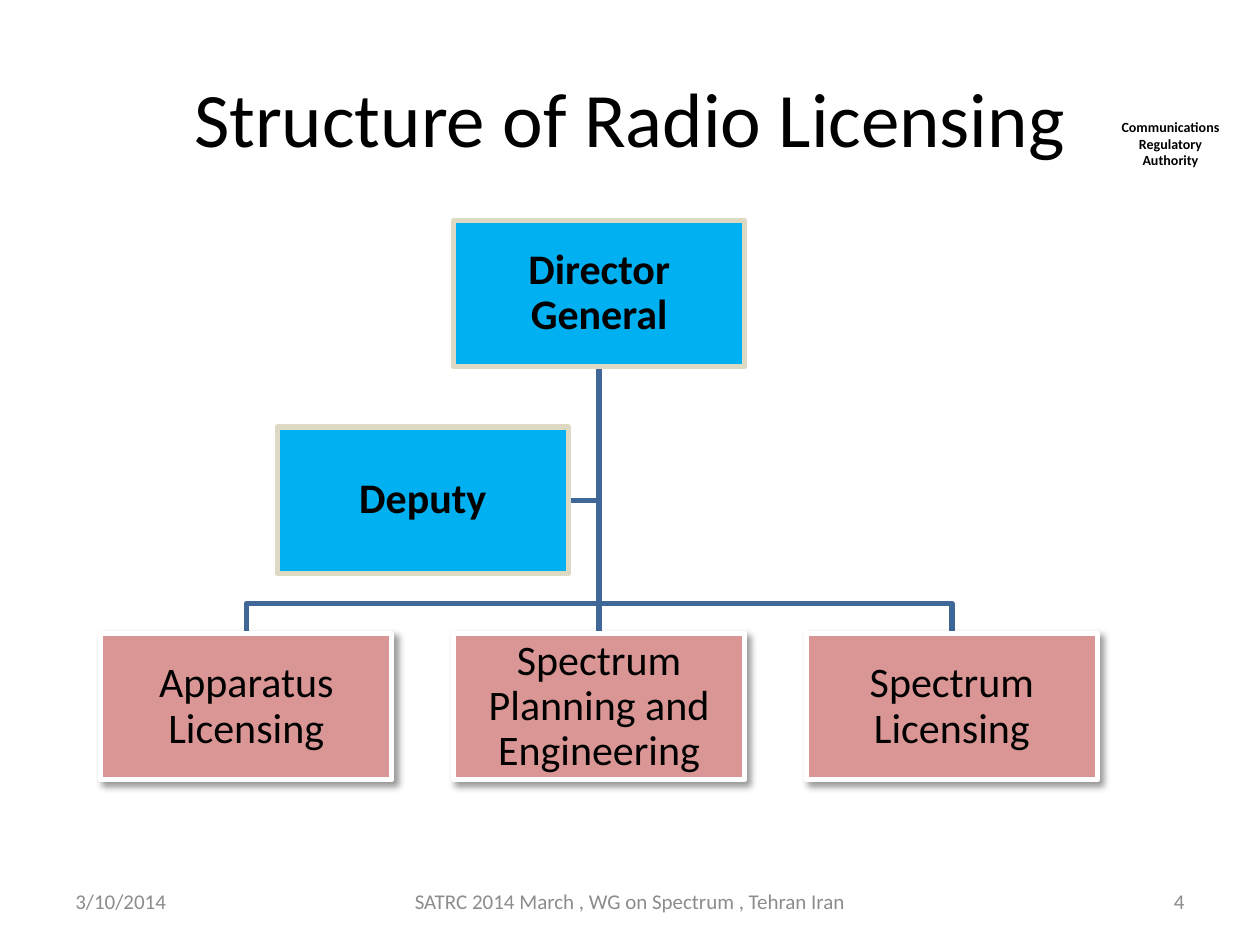
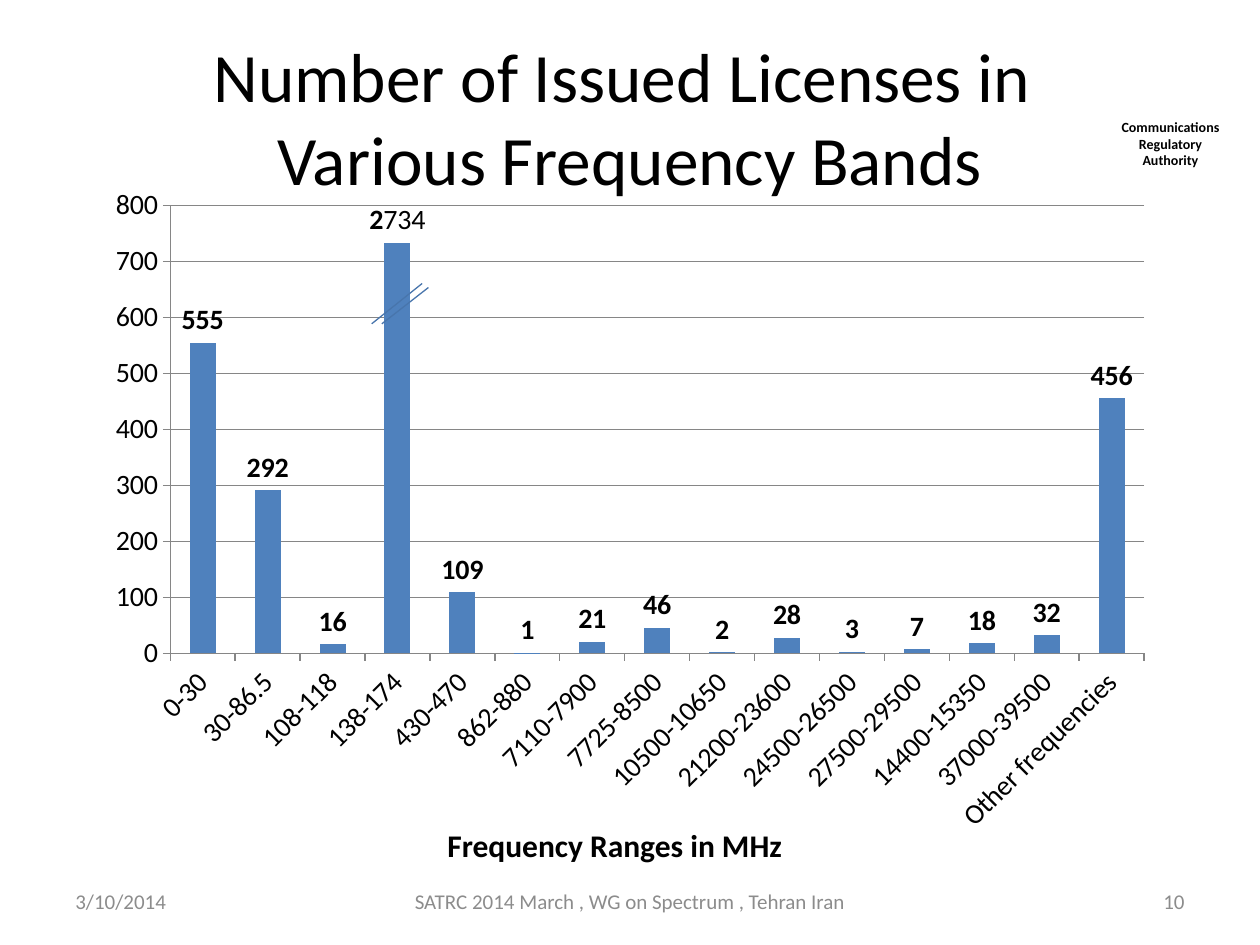
from dataclasses import dataclass
from lxml.etree import SubElement
from pptx import Presentation
from pptx.chart.data import CategoryChartData
from pptx.dml.color import RGBColor
from pptx.enum.chart import XL_CHART_TYPE, XL_LABEL_POSITION, XL_TICK_MARK
from pptx.enum.shapes import MSO_CONNECTOR, MSO_SHAPE
from pptx.enum.text import MSO_ANCHOR, MSO_AUTO_SIZE, PP_ALIGN
from pptx.oxml.ns import qn
from pptx.util import Inches, Pt

COLORS = {
    "text": "000000",
    "footer": "8C8C8C",
    "branch": "3F6797",
    "leader": "00B0F0",
    "leader_edge": "DDD9C3",
    "unit": "D99694",
    "unit_edge": "FFFFFF",
    "shadow": "000000",
    "bar": "4F81BD",
    "axis": "868686",
    "break": "4875AC",
}
FONT = "Calibri"
COLUMNS, ROWS = 100, 75
CELL = 0.1
FOOTER_TOP, FOOTER_HEIGHT = 69.5, 4
DATE = "3/10/2014"
EVENT = "SATRC 2014 March , WG on Spectrum , Tehran Iran"
AUTHORITY = "Communications Regulatory Authority"

LICENSES = {
    "0-30": 555,
    "30-86.5": 292,
    "108-118": 16,
    "138-174": 734,
    "430-470": 109,
    "862-880": 1,
    "7110-7900": 21,
    "7725-8500": 46,
    "10500-10650": 2,
    "21200-23600": 28,
    "24500-26500": 3,
    "27500-29500": 7,
    "14400-15350": 18,
    "37000-39500": 32,
    "Other frequencies": 456,
}
BROKEN_BAND = "138-174"


@dataclass
class Box:
    left: float
    top: float
    width: float
    height: float

    def share(self, left, width):
        return Box(self.left + left * self.width, self.top,
                   width * self.width, self.height)

    def point(self, across, down):
        return (Inches((self.left + across * self.width) * CELL),
                Inches((self.top + down * self.height) * CELL))

    def frame(self):
        return [Inches(length * CELL)
                for length in (self.left, self.top, self.width, self.height)]


def color(name):
    return RGBColor.from_string(COLORS[name])


def style_font(font, size, name="text", bold=False):
    font.name, font.size, font.bold = FONT, Pt(size), bold
    font.color.rgb = color(name)


def style_line(line, name, width):
    line.color.rgb = color(name)
    line.width = Pt(width)


def write(shape, text, size, name="text", bold=False, align=PP_ALIGN.CENTER,
          anchor=MSO_ANCHOR.MIDDLE):
    text_frame = shape.text_frame
    text_frame.word_wrap = True
    text_frame.auto_size = MSO_AUTO_SIZE.NONE
    text_frame.vertical_anchor = anchor
    paragraph = text_frame.paragraphs[0]
    paragraph.alignment = align
    for index, line in enumerate(text.split("\n")):
        if index:
            paragraph.add_line_break()
        run = paragraph.add_run()
        run.text = line
        style_font(run.font, size, name, bold)
    return paragraph


def add_text(slide, box, text, size, **options):
    write(slide.shapes.add_textbox(*box.frame()), text, size, **options)


def add_straight(slide, begin, end, name, width):
    connector = slide.shapes.add_connector(MSO_CONNECTOR.STRAIGHT, *begin, *end)
    style_line(connector.line, name, width)
    SubElement(connector.element.spPr, qn("a:effectLst"))
    return connector


def add_footer(slide, box, number):
    add_text(slide, box.share(0, 0.26), DATE, 12,
             name="footer", align=PP_ALIGN.LEFT)
    add_text(slide, box.share(0.74, 0.26), number, 12,
             name="footer", align=PP_ALIGN.RIGHT)
    add_text(slide, box.share(0.29, 0.42), EVENT, 12, name="footer")


def add_titled_slide(presentation, title, size, number):
    slide = presentation.slides.add_slide(presentation.slide_layouts[5])
    placeholder = slide.shapes.title
    box = Box(5, 3, COLUMNS - 10, ROWS / 6)
    placeholder.left, placeholder.top, placeholder.width, placeholder.height = box.frame()
    write(placeholder, title, size)
    add_text(slide, Box(87.8, 8.9, 10.2, 5), AUTHORITY, 8, bold=True,
             anchor=MSO_ANCHOR.TOP)
    add_footer(slide, Box(5, FOOTER_TOP, COLUMNS - 10, FOOTER_HEIGHT), number)
    return slide


def add_drop_shadow(shape):
    effects = shape.element.spPr.find(qn("a:effectLst"))
    shadow = SubElement(effects, qn("a:outerShdw"), blurRad=str(Pt(4)),
                        dist=str(Pt(3)), dir=str(45 * 60000), algn="tl")
    shade = SubElement(shadow, qn("a:srgbClr"), val=COLORS["shadow"])
    SubElement(shade, qn("a:alpha"), val="40000")


def add_node(slide, box, text, kind):
    node = slide.shapes.add_shape(MSO_SHAPE.RECTANGLE, *box.frame())
    node.shadow.inherit = False
    node.fill.solid()
    node.fill.fore_color.rgb = color(kind)
    style_line(node.line, kind + "_edge", 3)
    paragraph = write(node, text, 24, bold=kind == "leader")
    paragraph.line_spacing = 0.9
    text_frame = node.text_frame
    text_frame.margin_left = text_frame.margin_right = Inches(0.02)
    text_frame.margin_top = text_frame.margin_bottom = Inches(0.02)
    if kind == "unit":
        add_drop_shadow(node)
    return node


def add_branch(slide, points):
    builder = slide.shapes.build_freeform(*points[0], scale=1.0)
    builder.add_line_segments(points[1:], close=False)
    branch = builder.convert_to_shape()
    branch.shadow.inherit = False
    branch.fill.background()
    style_line(branch.line, "branch", 3)
    return branch


def add_organization(slide, box):
    width, height = 23.1, 11.6
    column_step = (box.width - width) / 2
    row_step = (box.height - height) / 2

    def cell(column, row):
        return Box(box.left + column * column_step, box.top + row * row_step,
                   width, height)

    director_cell, deputy_cell = cell(1, 0), cell(0.5, 1)
    director = add_node(slide, director_cell, "Director General", "leader")
    names = ["Apparatus Licensing", "Spectrum Planning and Engineering",
             "Spectrum Licensing"]
    units = [add_node(slide, cell(column, 2), name, "unit")
             for column, name in enumerate(names)]
    add_node(slide, deputy_cell, "Deputy", "leader")

    start = director_cell.point(0.5, 1)
    deputy_side = deputy_cell.point(1, 0.5)
    branches = [add_branch(slide, [start, (start[0], deputy_side[1]), deputy_side])]
    for column in (0, 2):
        unit_top = cell(column, 2).point(0.5, 0)
        bus = unit_top[1] - Inches(0.24)
        branches.append(add_branch(
            slide, [start, (start[0], bus), (unit_top[0], bus), unit_top]))
    trunk = add_straight(slide, start, cell(1, 2).point(0.5, 0), "branch", 3)
    trunk.begin_connect(director, 2)
    trunk.end_connect(units[1], 0)
    for branch in branches + [trunk]:
        slide.shapes.element.insert(2, branch.element)


def style_axes(chart):
    value_axis, category_axis = chart.value_axis, chart.category_axis
    value_axis.minimum_scale, value_axis.maximum_scale = 0, 800
    value_axis.major_unit = 100
    value_axis.has_major_gridlines = True
    style_line(value_axis.major_gridlines.format.line, "axis", 0.75)
    for axis in (value_axis, category_axis):
        axis.major_tick_mark = XL_TICK_MARK.OUTSIDE
        style_line(axis.format.line, "axis", 0.75)
        style_font(axis.tick_labels.font, 16)
    for body in chart.element.xpath(".//c:catAx/c:txPr/a:bodyPr"):
        body.set("rot", str(-45 * 60000))


def add_license_chart(slide, box):
    data = CategoryChartData()
    data.categories = list(LICENSES)
    data.add_series("Series 1", list(LICENSES.values()))
    chart = slide.shapes.add_chart(XL_CHART_TYPE.COLUMN_CLUSTERED,
                                   *box.frame(), data).chart
    chart.has_title = chart.has_legend = False
    style_font(chart.font, 16)
    style_axes(chart)
    plot = chart.plots[0]
    plot.gap_width, plot.vary_by_categories = 150, False
    series = plot.series[0]
    series.format.fill.solid()
    series.format.fill.fore_color.rgb = color("bar")
    labels = series.data_labels
    labels.show_value = True
    labels.position = XL_LABEL_POSITION.OUTSIDE_END
    style_font(labels.font, 16, bold=True)
    label = series.points[list(LICENSES).index(BROKEN_BAND)].data_label
    paragraph = label.text_frame.paragraphs[0]
    for text, bold in (("2", True), ("734", False)):
        run = paragraph.add_run()
        run.text = text
        style_font(run.font, 16, bold=bold)
    label.position = XL_LABEL_POSITION.OUTSIDE_END


def add_bar_break(slide, box):
    for begin, end in (((0.18, 1), (1, 0.1)), ((0, 1), (0.89, 0))):
        add_straight(slide, box.point(*begin), box.point(*end), "break", 0.75)


def build_structure_slide(presentation):
    slide = add_titled_slide(presentation, "Structure of Radio Licensing", 44, "4")
    add_organization(slide, Box(8, 17.5, 79.1, 44.4))


def build_license_slide(presentation):
    title = "Number of Issued Licenses in \nVarious Frequency Bands"
    slide = add_titled_slide(presentation, title, 39.6, "10")
    add_license_chart(slide, Box(7.5, 13.9, COLUMNS - 15, 53.3))
    add_bar_break(slide, Box(29.5, 22.5, 4.5, 3.2))
    add_text(slide, Box(24, 65.1, 49.6, 4), "Frequency Ranges in MHz", 18,
             bold=True, anchor=MSO_ANCHOR.TOP)


def main():
    presentation = Presentation()
    presentation.slide_width = Inches(COLUMNS * CELL)
    presentation.slide_height = Inches(ROWS * CELL)
    build_structure_slide(presentation)
    build_license_slide(presentation)
    presentation.save("out.pptx")


if __name__ == "__main__":
    main()
